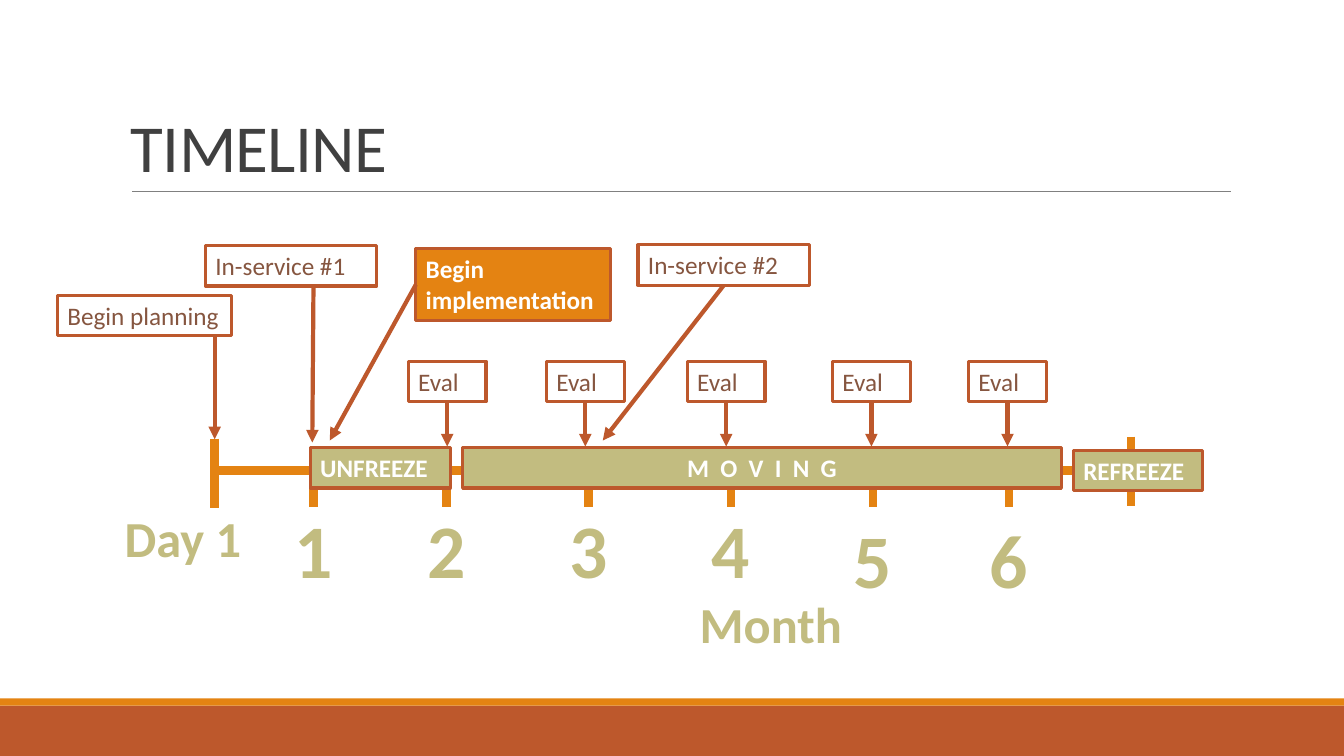
from lxml.etree import SubElement
from pptx import Presentation
from pptx.dml.color import RGBColor
from pptx.enum.shapes import MSO_CONNECTOR, MSO_SHAPE
from pptx.enum.text import MSO_ANCHOR, PP_ALIGN
from pptx.oxml import parse_xml
from pptx.oxml.ns import nsdecls, qn
from pptx.util import Cm, Pt

ORANGE, RUST, OLIVE = "E48312", "BD582C", "C2BC80"
BROWN, WHITE, CHARCOAL, GRAY = "865640", "FFFFFF", "404040", "808080"
BOX_HEIGHT = 1.02
AXIS_Y = 11.86
MONTHS = [7.9, 11.25, 14.83, 18.42, 22, 25.43]


def color(code):
    """Turn a hex string into a colour."""
    return RGBColor.from_string(code)


def write(shape, text, size, code, bold=False, align=PP_ALIGN.LEFT):
    """Put one formatted paragraph into a shape and return it."""
    shape.text_frame.word_wrap = True
    para = shape.text_frame.paragraphs[0]
    para.text = text
    para.alignment = align
    para.font.name = "Calibri"
    para.font.size = Pt(size)
    para.font.bold = bold
    para.font.color.rgb = color(code)
    return para


def set_spacing(para, hundredths):
    """Set the space between letters in hundredths of a point."""
    para._p.pPr.find(qn("a:defRPr")).set("spc", str(hundredths))


def add_line(page, start, end, code, width, arrow=False):
    """Draw a straight line, with an arrowhead at its end if wanted."""
    line = page.shapes.add_connector(
        MSO_CONNECTOR.STRAIGHT, *[Cm(value) for value in (*start, *end)])
    line.line.color.rgb = color(code)
    line.line.width = Pt(width)
    if arrow:
        SubElement(line.line._get_or_add_ln(), qn("a:tailEnd"), type="triangle")
    SubElement(line._element.spPr, qn("a:effectLst"))


def add_arrow(page, start, end):
    """Draw an arrow from a label down to the timeline."""
    add_line(page, start, end, RUST, 3, arrow=True)


def add_bar(page, left, top, width, height, fill=None, outline=None):
    """Draw a rectangle with an optional fill and outline."""
    bar = page.shapes.add_shape(
        MSO_SHAPE.RECTANGLE, Cm(left), Cm(top), Cm(width), Cm(height))
    bar.shadow.inherit = False
    if fill:
        bar.fill.solid()
        bar.fill.fore_color.rgb = color(fill)
    else:
        bar.fill.background()
    if outline:
        bar.line.color.rgb = color(outline)
        bar.line.width = Pt(2.25)
    else:
        bar.line.fill.background()
    return bar


def add_label(page, text, left, top, width, height=BOX_HEIGHT, fill=None,
              align=PP_ALIGN.LEFT):
    """Draw a framed label, bold and white when it is filled."""
    box = add_bar(page, left, top, width, height, fill, RUST)
    box.text_frame.vertical_anchor = MSO_ANCHOR.TOP
    return write(box, text, 18, WHITE if fill else BROWN, bool(fill), align)


def add_caption(page, text, left, top, width, height, size):
    """Write a large centred caption with a thin white outline."""
    box = page.shapes.add_textbox(Cm(left), Cm(top), Cm(width), Cm(height))
    para = write(box, text, size, OLIVE, True, PP_ALIGN.CENTER)
    box.text_frame.word_wrap = False
    para._p.pPr.find(qn("a:defRPr")).insert(0, parse_xml(
        f'<a:ln {nsdecls("a")} w="9525"><a:solidFill>'
        f'<a:srgbClr val="{WHITE}"/></a:solidFill></a:ln>'))


def add_frame(page):
    """Draw the footer bands, the title and the rule below it."""
    add_bar(page, 0, 17.78, 33.87, 1.27, RUST)
    add_bar(page, 0, 17.6, 33.87, 0.18, ORANGE)
    add_line(page, (3.33, 4.83), (31.01, 4.83), GRAY, 0.5)
    title = page.shapes.add_textbox(Cm(3.05), Cm(0.79), Cm(27.94), Cm(4.04))
    title.text_frame.vertical_anchor = MSO_ANCHOR.BOTTOM
    para = write(title, "TIMELINE", 48, CHARCOAL)
    para.line_spacing = 0.85
    set_spacing(para, -50)


def add_axis(page):
    """Draw the time axis with its ticks and captions."""
    add_line(page, (5.46, AXIS_Y), (28.4, AXIS_Y), ORANGE, 6)
    for x, top in ((5.41, 11.05), (28.5, 11)):
        for y in (top, top + 0.86):
            add_line(page, (x, y), (x, y + 0.9), ORANGE, 6)
    for month, x in enumerate(MONTHS, 1):
        add_line(page, (x, AXIS_Y), (x, AXIS_Y + 0.92), ORANGE, 6)
        top = 12.55 if month < 5 else 12.8
        add_caption(page, str(month), x - 0.75, top, 1.5, 2.57, 54)
    add_caption(page, "Day 1", 2.87, 12.65, 3.48, 1.8, 36)
    add_caption(page, "Month", 15.93, 14.83, 6.99, 1.8, 36)


def add_events(page):
    """Draw the event labels and their arrows."""
    add_label(page, "Begin planning", 1.45, 7.44, 4.39)
    add_arrow(page, (5.41, 8.46), (5.41, 11.07))
    add_label(page, "In-service #1", 5.18, 6.19, 4.32)
    add_arrow(page, (7.9, 7.2), (7.87, 11.15))
    add_label(page, "Begin implementation", 10.48, 6.27, 4.91, 1.8, ORANGE)
    add_arrow(page, (10.48, 7.17), (8.31, 11.1))
    add_label(page, "In-service #2", 16.08, 6.17, 4.32)
    add_arrow(page, (18.24, 7.19), (15.19, 11.1))
    for left in (10.29, 13.77, 17.32, 20.98, 24.41):
        add_label(page, "Eval", left, 9.1, 1.96)
        add_arrow(page, (left + 0.98, 10.13), (left + 0.98, 11.25))


def add_phases(page):
    """Draw the three phases of change along the axis."""
    add_label(page, "UNFREEZE", 7.82, 11.28, 3.53, fill=OLIVE)
    moving = add_label(page, "M O V I N G", 11.66, 11.28, 15.09, fill=OLIVE,
                       align=PP_ALIGN.CENTER)
    set_spacing(moving, 200)
    add_label(page, "REFREEZE", 27.05, 11.35, 3.25, fill=OLIVE)


def main():
    """Build the timeline slide and save it."""
    deck = Presentation()
    deck.slide_width, deck.slide_height = Cm(33.87), Cm(19.05)
    page = deck.slides.add_slide(deck.slide_layouts[6])
    add_frame(page)
    add_axis(page)
    add_events(page)
    add_phases(page)
    deck.save("out.pptx")


if __name__ == "__main__":
    main()
